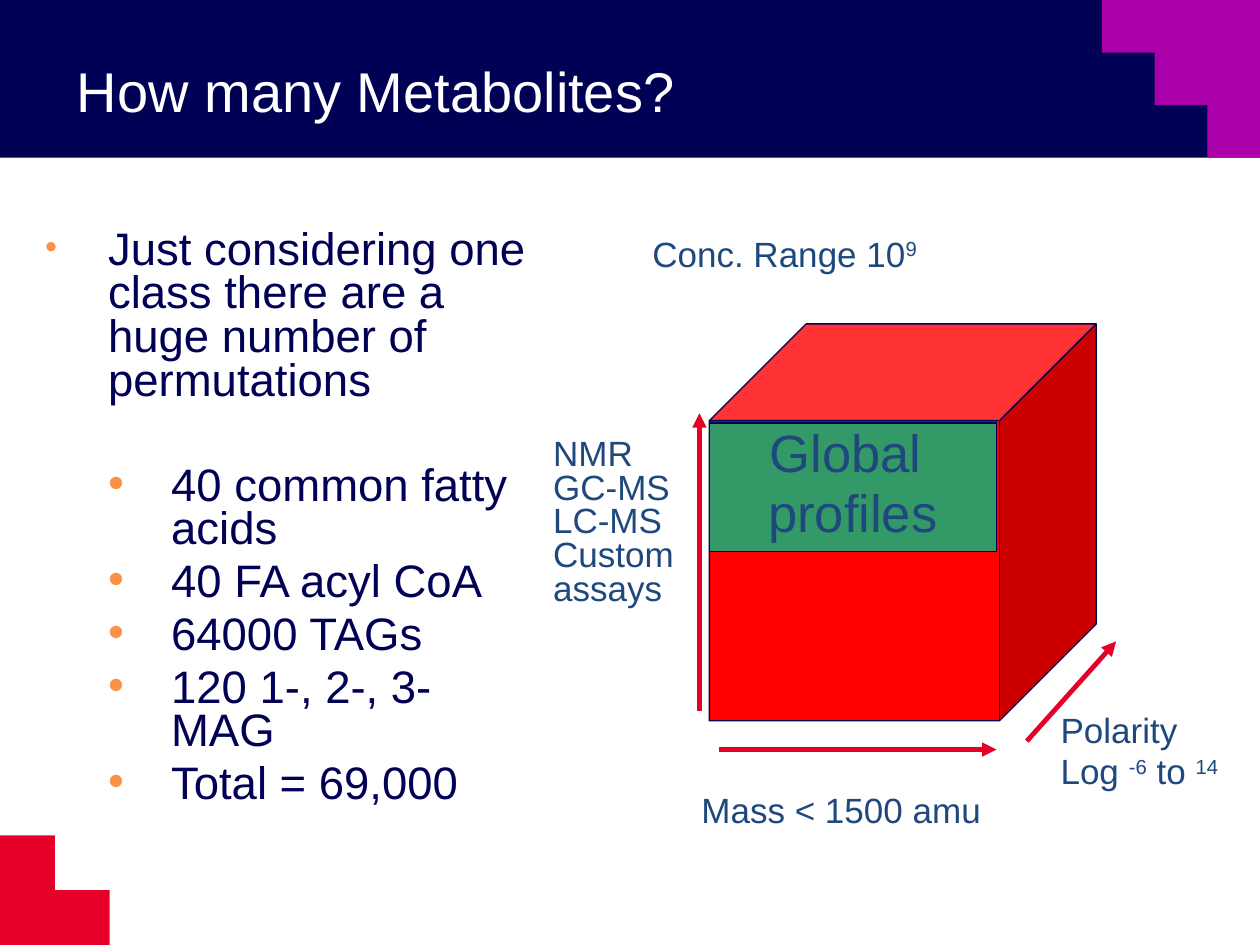
from lxml import etree
from pptx import Presentation
from pptx.dml.color import RGBColor
from pptx.enum.shapes import MSO_CONNECTOR, MSO_SHAPE
from pptx.enum.text import MSO_ANCHOR, PP_ALIGN
from pptx.oxml.ns import qn
from pptx.util import Cm, Pt

NAVY = RGBColor(0x00, 0x00, 0x54)
CRIMSON = RGBColor(0xE6, 0x00, 0x28)
PURPLE = RGBColor(0xAA, 0x00, 0xAA)
RED = RGBColor(0xFF, 0x00, 0x00)
GREEN = RGBColor(0x33, 0x99, 0x66)
BLUE = RGBColor(0x1F, 0x49, 0x7D)
ORANGE = RGBColor(0xFC, 0x91, 0x47)
WHITE = RGBColor(0xFF, 0xFF, 0xFF)


def paint(shape, fill, outline=None):
    shape.shadow.inherit = False
    shape.fill.solid()
    shape.fill.fore_color.rgb = fill
    if outline is None:
        shape.line.fill.background()
    else:
        shape.line.color.rgb = outline
        shape.line.width = Pt(0.75)


def write(frame, paragraphs, size, color, wrap=True, **formats):
    """Fill the frame; a paragraph is a list of runs, and "^" marks a superscript run."""
    frame.word_wrap = wrap
    for number, runs in enumerate(paragraphs):
        paragraph = frame.paragraphs[0] if number == 0 else frame.add_paragraph()
        for name, value in formats.items():
            if number > 0 or name != "space_before":
                setattr(paragraph, name, value)
        for text in runs:
            run = paragraph.add_run()
            run.text = text.lstrip("^")
            run.font.name = "Arial"
            run.font.size = Pt(size)
            run.font.color.rgb = color
            if text.startswith("^"):
                run.font._element.set("baseline", "30000")


presentation = Presentation()
presentation.slide_width = Cm(25.4)
presentation.slide_height = Cm(19.05)
slide = presentation.slides.add_slide(presentation.slide_layouts[6])
shapes = slide.shapes

# Header band and stepped corners
header = shapes.add_shape(MSO_SHAPE.RECTANGLE, 0, 0, Cm(25.4), Cm(3.18))
paint(header, NAVY)
corner = shapes.add_shape(MSO_SHAPE.CORNER, 0, Cm(16.84), Cm(2.21), Cm(2.21))
paint(corner, CRIMSON)

STEP = 1.06
STAIRS_LEFT = 22.22
stairs = shapes.build_freeform(Cm(STAIRS_LEFT), 0)
stair_points = []
for step in range(3):
    x = STAIRS_LEFT + STEP * step
    stair_points += [(Cm(x), Cm(STEP * (step + 1))), (Cm(x + STEP), Cm(STEP * (step + 1)))]
stairs.add_line_segments(stair_points + [(Cm(25.4), 0)], close=True)
paint(stairs.convert_to_shape(), PURPLE)

title = shapes.add_textbox(Cm(1.3), Cm(0.71), Cm(22.86), Cm(2.21)).text_frame
title.vertical_anchor = MSO_ANCHOR.MIDDLE
write(title, [["How many Metabolites?"]], 32, WHITE)

# Bulleted list
metabolites = shapes.add_textbox(Cm(0.66), Cm(4.52), Cm(10.24), Cm(14.53)).text_frame
write(metabolites, [
    ["Just considering one class there are a huge number of permutations"],
    ["40 common fatty acids"],
    ["40 FA acyl CoA"],
    ["64000 TAGs"],
    ["120 1-, 2-, 3- MAG"],
    ["Total = 69,000"],
], 26, NAVY, line_spacing=0.8, space_before=Pt(5.2))
metabolites.paragraphs[1].space_before = Pt(35)
for number, paragraph in enumerate(metabolites.paragraphs):
    level = min(number, 1)
    paragraph.level = level
    properties = paragraph._p.get_or_add_pPr()
    properties.set("marL", str(Cm(1.27 * (level + 1))))
    properties.set("indent", str(Cm(-1.27)))
    bullet_color = etree.SubElement(properties, qn("a:buClr"))
    etree.SubElement(bullet_color, qn("a:srgbClr"), val=str(ORANGE))
    bullet_size = "100000" if level else "75000"
    etree.SubElement(properties, qn("a:buSzPct"), val=bullet_size)
    etree.SubElement(properties, qn("a:buFont"), typeface="Arial")
    etree.SubElement(properties, qn("a:buChar"), char="•")

# Cube with its three axes
cube = shapes.add_shape(MSO_SHAPE.CUBE, Cm(14.3), Cm(6.53), Cm(7.8), Cm(8))
paint(cube, RED, NAVY)

for x1, y1, x2, y2 in [
    (14.5, 15.11, 20.09, 15.11),
    (14.1, 14.33, 14.1, 8.33),
    (20.7, 14.94, 22.5, 12.93),
]:
    axis = shapes.add_connector(MSO_CONNECTOR.STRAIGHT, Cm(x1), Cm(y1), Cm(x2), Cm(y2))
    axis.line.color.rgb = CRIMSON
    axis.line.width = Pt(2.75)
    etree.SubElement(axis.line._get_or_add_ln(), qn("a:tailEnd"), type="triangle")
    etree.SubElement(axis._element.spPr, qn("a:effectLst"))

for left, top, width, height, wrap, gap, paragraphs in [
    (21.13, 14.33, 3.84, 1.83, False, 4, [["Polarity"], ["Log ", "^-6", " to ", "^14"]]),
    (13.89, 15.93, 6.2, 0.97, False, 0, [["Mass < 1500 amu"]]),
    (12.9, 4.72, 10.01, 1.65, True, 0, [["Conc. Range 10", "^9"]]),
    (10.9, 8.74, 3, 3.71, True, 0, [["NMR"], ["GC-MS"], ["LC-MS"], ["Custom assays"]]),
]:
    label = shapes.add_textbox(Cm(left), Cm(top), Cm(width), Cm(height)).text_frame
    write(label, paragraphs, 20, BLUE, wrap, line_spacing=0.8, space_before=Pt(gap))

profiles = shapes.add_shape(MSO_SHAPE.RECTANGLE, Cm(14.3), Cm(8.53), Cm(5.79), Cm(2.59))
paint(profiles, GREEN, NAVY)
profiles.text_frame.vertical_anchor = MSO_ANCHOR.MIDDLE
write(profiles.text_frame, [["Global "], ["profiles"]], 30, BLUE, False,
      alignment=PP_ALIGN.CENTER, line_spacing=0.8, space_before=Pt(6))

presentation.save("out.pptx")
